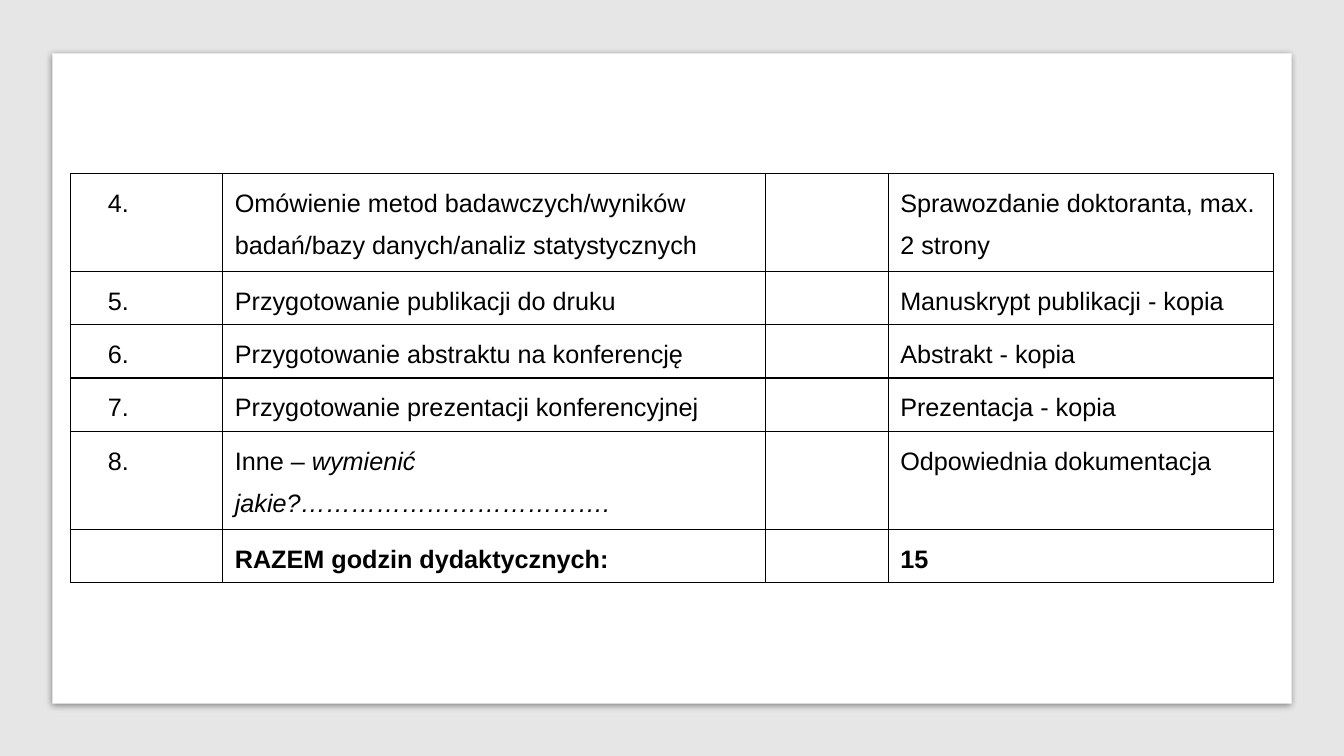
import pptx
import pptx.dml.color
import pptx.enum.shapes
import pptx.oxml
import pptx.oxml.ns
import pptx.util

Inches = pptx.util.Inches
Pt = pptx.util.Pt

COLORS = {"back": "E7E6E6", "card": "FFFFFF", "ink": "000000"}
WIDTHS = [1.51, 5.38, 1.22, 3.82]
HEIGHTS = [0.97, 0.53, 0.53, 0.53, 0.97, 0.53]

# Each cell is a list of (text, style) runs
ROWS = [
    [[("4.", "")],
     [("Omówienie metod badawczych/wyników badań/bazy danych/analiz statystycznych", "")],
     [], [("Sprawozdanie doktoranta, max. 2 strony", "")]],
    [[("5.", "")], [("Przygotowanie publikacji do druku", "")],
     [], [("Manuskrypt publikacji - kopia", "")]],
    [[("6.", "")], [("Przygotowanie abstraktu na konferencję", "")],
     [], [("Abstrakt - kopia", "")]],
    [[("7.", "")], [("Przygotowanie prezentacji konferencyjnej", "")],
     [], [("Prezentacja - kopia", "")]],
    [[("8.", "")],
     [("Inne – ", ""), ("wymienić jakie?……………………………….", "i")],
     [], [("Odpowiednia dokumentacja", "")]],
    [[], [("RAZEM godzin dydaktycznych:", "b")], [], [("15", "b")]],
]


def color(name):
    return pptx.dml.color.RGBColor.from_string(COLORS[name])


def parse_xml(tag, attrs, body):
    space = pptx.oxml.ns.nsdecls("a")
    return pptx.oxml.parse_xml(f"<a:{tag} {space} {attrs}>{body}</a:{tag}>")


def add_panel(slide, box, fill):
    left, top, width, height = map(Inches, box)
    panel = slide.shapes.add_shape(
        pptx.enum.shapes.MSO_SHAPE.RECTANGLE, left, top, width, height)
    panel.shadow.inherit = False
    panel.fill.solid()
    panel.fill.fore_color.rgb = color(fill)
    panel.line.fill.background()
    return panel


def add_shadow(panel):
    props = panel.fill._xPr
    effects = props.find(pptx.oxml.ns.qn("a:effectLst"))
    effects.append(parse_xml(
        "outerShdw", f'blurRad="{Pt(5)}" dist="{Pt(1.4)}" dir="5400000"',
        f'<a:srgbClr val="{COLORS["ink"]}"><a:alpha val="43000"/></a:srgbClr>'))


def set_border(cell):
    props = cell._tc.get_or_add_tcPr()
    for index, side in enumerate(("lnL", "lnR", "lnT", "lnB")):
        props.insert(index, parse_xml(
            side, f'w="{Pt(1)}"',
            f'<a:solidFill><a:srgbClr val="{COLORS["ink"]}"/></a:solidFill>'))


def fill_cell(cell, runs, indent):
    cell.fill.background()
    cell.margin_left = cell.margin_right = Inches(0.12)
    cell.margin_top, cell.margin_bottom = Inches(0.02), 0
    set_border(cell)
    if not runs:
        return
    para = cell.text_frame.paragraphs[0]
    para.line_spacing = 1.5
    para.space_before = para.space_after = Pt(6)
    para.font.name = "Arial"
    para.font.size = Pt(18)
    para.font.color.rgb = color("ink")
    if indent:
        props = para._p.get_or_add_pPr()
        props.set("marL", str(Inches(0.25)))
        props.set("indent", "0")
    for text, style in runs:
        run = para.add_run()
        run.text = text
        if style == "b":
            run.font.bold = True
        elif style == "i":
            run.font.italic = True


def add_grid(slide, left, top):
    table = slide.shapes.add_table(
        len(ROWS), len(WIDTHS), Inches(left), Inches(top),
        Inches(sum(WIDTHS)), Inches(sum(HEIGHTS))).table
    table.first_row = table.horz_banding = False
    for column, width in zip(table.columns, WIDTHS):
        column.width = Inches(width)
    for row, height, cells in zip(table.rows, HEIGHTS, ROWS):
        row.height = Inches(height)
        for index, (cell, runs) in enumerate(zip(row.cells, cells)):
            fill_cell(cell, runs, indent=index == 0)


def main():
    deck = pptx.Presentation()
    deck.slide_width, deck.slide_height = Inches(13.33), Inches(7.5)
    slide = deck.slides.add_slide(deck.slide_layouts[6])
    # Backdrop and card
    add_panel(slide, (0, 0, 13.33, 7.5), "back")
    add_shadow(add_panel(slide, (0.52, 0.53, 12.29, 6.45), "card"))
    # Table of activities
    add_grid(slide, 0.7, 1.72)
    deck.save("out.pptx")


if __name__ == "__main__":
    main()
